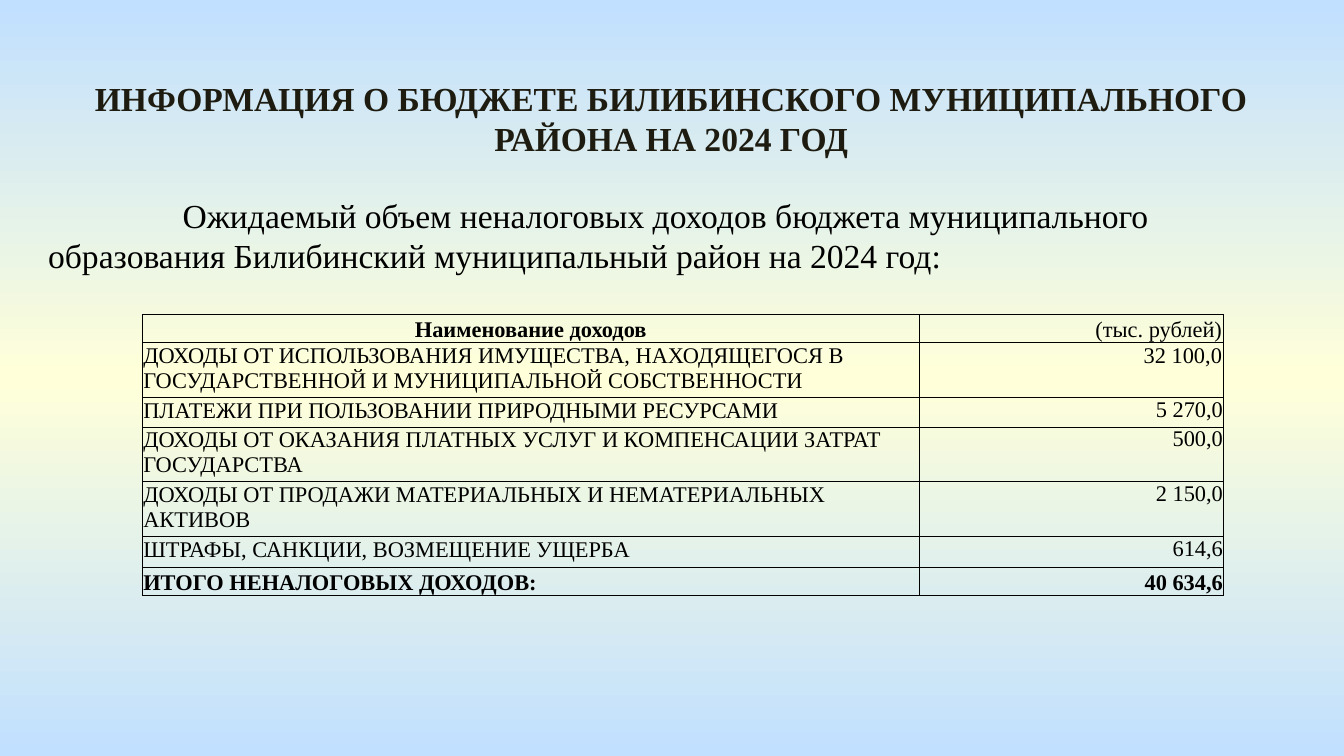
import copy

import pptx
import pptx.dml.color
import pptx.enum.text
import pptx.oxml
import pptx.oxml.ns
import pptx.util

Inches = pptx.util.Inches
Pt = pptx.util.Pt
RGBColor = pptx.dml.color.RGBColor
Align = pptx.enum.text.PP_ALIGN
Anchor = pptx.enum.text.MSO_ANCHOR
qn = pptx.oxml.ns.qn

BLACK = RGBColor(0, 0, 0)
DARK = RGBColor(0x1E, 0x1C, 0x11)
BLUE = RGBColor(0xC1, 0xE0, 0xFF)
CREAM = RGBColor(0xFF, 0xFF, 0xD9)
FONT = "Times New Roman"

COLS = [5.78, 2.26]
# Row height, income name, amount
ROWS = [
    (0.21, "Наименование доходов", "(тыс. рублей)"),
    (0.4, "ДОХОДЫ ОТ ИСПОЛЬЗОВАНИЯ ИМУЩЕСТВА, НАХОДЯЩЕГОСЯ В "
          "ГОСУДАРСТВЕННОЙ И МУНИЦИПАЛЬНОЙ СОБСТВЕННОСТИ", "32 100,0"),
    (0.22, "ПЛАТЕЖИ ПРИ ПОЛЬЗОВАНИИ ПРИРОДНЫМИ РЕСУРСАМИ", "5 270,0"),
    (0.4, "ДОХОДЫ ОТ ОКАЗАНИЯ ПЛАТНЫХ УСЛУГ И КОМПЕНСАЦИИ ЗАТРАТ "
          "ГОСУДАРСТВА", "500,0"),
    (0.4, "ДОХОДЫ ОТ ПРОДАЖИ МАТЕРИАЛЬНЫХ И НЕМАТЕРИАЛЬНЫХ АКТИВОВ", "2 150,0"),
    (0.23, "ШТРАФЫ, САНКЦИИ, ВОЗМЕЩЕНИЕ УЩЕРБА", "614,6"),
    (0.21, "ИТОГО НЕНАЛОГОВЫХ ДОХОДОВ:", "40 634,6"),
]


def style(para, size, color=BLACK, bold=False, align=Align.LEFT):
    para.alignment = align
    font = para.font
    font.name, font.size, font.bold = FONT, Pt(size), bold
    font.color.rgb = color


def add_back(slide):
    """Vertical gradient: blue, cream, blue."""
    fill = slide.background.fill
    fill.gradient()
    fill.gradient_angle = 90
    stops = slide.element.find(".//" + qn("a:gsLst"))
    stops.insert(1, copy.deepcopy(stops[0]))
    for stop, color, place in zip(fill.gradient_stops, (BLUE, CREAM, BLUE), (0, 0.5, 1)):
        stop.color.rgb = color
        stop.position = place


def add_text(slide, box, text, **look):
    frame = slide.shapes.add_textbox(*map(Inches, box)).text_frame
    frame.word_wrap = True
    para = frame.paragraphs[0]
    para.add_run().text = text
    style(para, 18, **look)
    # Tab stops every inch
    para._p.get_or_add_pPr().set("defTabSz", str(Inches(1)))


def add_border(cell):
    props = cell._tc.get_or_add_tcPr()
    for place, side in enumerate(("lnL", "lnR", "lnT", "lnB")):
        props.insert(place, pptx.oxml.parse_xml(
            f'<a:{side} {pptx.oxml.ns.nsdecls("a")} w="{Pt(0.5)}"><a:solidFill>'
            f'<a:srgbClr val="{BLACK}"/></a:solidFill></a:{side}>'))


def add_grid(slide, box):
    """Income table: names on the left, amounts on the right."""
    last = len(ROWS) - 1
    table = slide.shapes.add_table(len(ROWS), len(COLS), *map(Inches, box)).table
    for col, width in zip(table.columns, COLS):
        col.width = Inches(width)
    for i, (height, *texts) in enumerate(ROWS):
        table.rows[i].height = Inches(height)
        for j, text in enumerate(texts):
            cell = table.cell(i, j)
            cell.text = text
            cell.fill.background()
            pad = Pt(0 if j == 1 and i > 1 else 0.5)
            cell.margin_left = cell.margin_right = cell.margin_top = pad
            cell.margin_bottom = 0
            cell.vertical_anchor = Anchor.BOTTOM if i in (0, last) else Anchor.TOP
            align = Align.RIGHT if j else Align.LEFT if i else Align.CENTER
            bold = i == last or (i, j) == (0, 0)
            style(cell.text_frame.paragraphs[0], 12, bold=bold, align=align)
            add_border(cell)


def main():
    deck = pptx.Presentation()
    deck.slide_width = Inches(10)
    deck.slide_height = deck.slide_width * 9 // 16
    slide = deck.slides.add_slide(deck.slide_layouts[6])
    add_back(slide)
    # Title
    add_text(slide, (0.39, 0.53, 9.21, 0.71),
             "ИНФОРМАЦИЯ О БЮДЖЕТЕ БИЛИБИНСКОГО МУНИЦИПАЛЬНОГО РАЙОНА НА 2024 ГОД",
             color=DARK, bold=True, align=Align.CENTER)
    # Lead-in
    add_text(slide, (0.26, 1.4, 9.49, 0.71),
             "\tОжидаемый объем неналоговых доходов бюджета муниципального "
             "образования Билибинский муниципальный район на 2024 год:")
    add_grid(slide, (1.06, 2.34, sum(COLS), sum(row[0] for row in ROWS)))
    deck.save("out.pptx")


if __name__ == "__main__":
    main()
